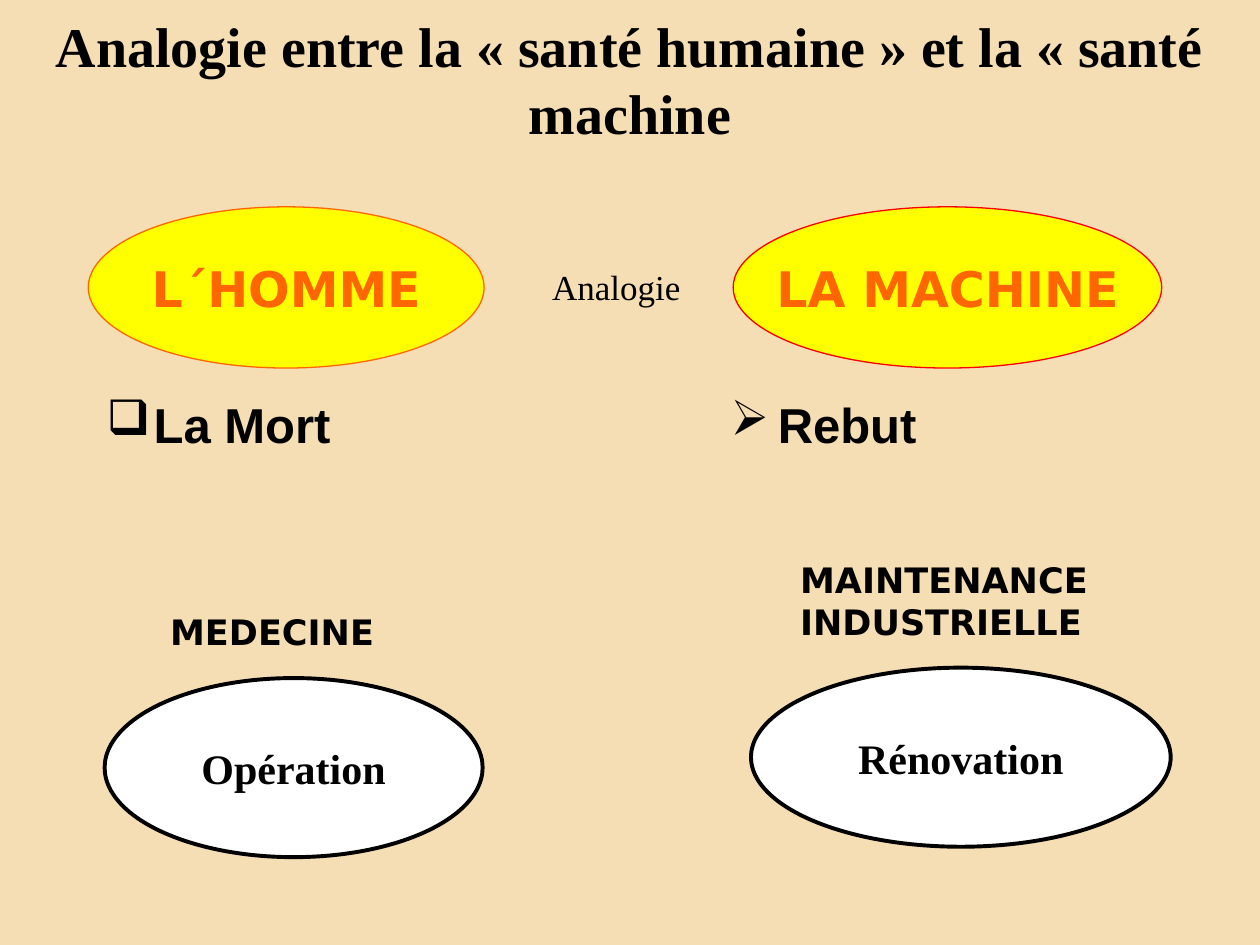
from dataclasses import dataclass

from lxml.etree import SubElement
from pptx import Presentation
from pptx.dml.color import RGBColor as Rgb
from pptx.enum.shapes import MSO_SHAPE as Kind
from pptx.enum.text import MSO_ANCHOR as Anchor, MSO_AUTO_SIZE as Fit, PP_ALIGN as Align
from pptx.oxml.ns import qn
from pptx.slide import Slide
from pptx.text.text import TextFrame
from pptx.util import Cm, Pt


@dataclass(frozen=True)
class Style:
    font: str
    size: int
    color: str
    bold: bool = True


@dataclass(frozen=True)
class Theme:
    back: str = "F5DEB3"
    ink: str = "000000"
    title: Style = Style("Times New Roman", 32, "000000")
    topic: Style = Style("DejaVu Sans", 28, "FF6600")
    point: Style = Style("Arial", 28, "000000")
    action: Style = Style("Times New Roman", 24, "000000")
    field: Style = Style("DejaVu Sans", 20, "000000")
    link: Style = Style("Times New Roman", 20, "000000", False)


@dataclass(frozen=True)
class Box:
    left: float
    top: float
    width: float
    height: float

    def place(self) -> tuple[Cm, Cm, Cm, Cm]:
        return Cm(self.left), Cm(self.top), Cm(self.width), Cm(self.height)


@dataclass(frozen=True)
class Oval:
    text: str
    box: Box
    style: Style
    fill: str
    edge: str
    weight: float


@dataclass(frozen=True)
class Label:
    lines: tuple[str, ...]
    box: Box
    style: Style
    align: Align = Align.LEFT
    wrap: bool = False
    grow: bool = True
    bullet: str = ""


THEME = Theme()
INDENT = Cm(0.95)

OVALS = (
    Oval("L´HOMME", Box(1.78, 4.17, 7.98, 3.25), THEME.topic, "FFFF00", "FF6600", 0.75),
    Oval("LA MACHINE", Box(14.78, 4.17, 8.64, 3.25), THEME.topic, "FFFF00", "FF0000", 0.75),
    Oval("Opération", Box(2.11, 13.67, 7.62, 3.61), THEME.action, "FFFFFF", THEME.ink, 2.25),
    Oval("Rénovation", Box(15.14, 13.46, 8.46, 3.61), THEME.action, "FFFFFF", THEME.ink, 2.25),
)

LABELS = (
    Label(("La Mort",), Box(1.9, 7.82, 10.6, 2.97), THEME.point,
          wrap=True, grow=False, bullet="❑"),
    Label(("Rebut",), Box(14.48, 7.82, 10.6, 2.54), THEME.point,
          wrap=True, grow=False, bullet="➢"),
    Label(("MEDECINE",), Box(3.18, 12.19, 4.98, 1.12), THEME.field),
    Label(("MAINTENANCE", "INDUSTRIELLE"), Box(15.88, 11.13, 6.73, 1.96), THEME.field),
    Label(("Analogie",), Box(10.57, 5.23, 3.71, 1.12), THEME.link, Align.CENTER, wrap=True),
)


def write(frame: TextFrame, lines: tuple[str, ...], style: Style,
          align: Align, bullet: str = "") -> None:
    for i, line in enumerate(lines):
        para = frame.paragraphs[0] if i == 0 else frame.add_paragraph()
        para.alignment = align
        if bullet:
            props = para._p.get_or_add_pPr()
            props.set("marL", str(INDENT))
            props.set("indent", str(-INDENT))
            SubElement(props, qn("a:buChar")).set("char", bullet)
        run = para.add_run()
        run.text = line
        font = run.font
        font.name, font.size, font.bold = style.font, Pt(style.size), style.bold
        font.color.rgb = Rgb.from_string(style.color)


def add_title(slide: Slide, text: str) -> None:
    title = slide.shapes.title
    title.left, title.top, title.width, title.height = Box(0, 0, 25.4, 3.18).place()
    frame = title.text_frame
    frame.word_wrap, frame.auto_size = True, Fit.NONE
    frame.vertical_anchor = Anchor.MIDDLE
    write(frame, (text,), THEME.title, Align.CENTER)


def add_oval(slide: Slide, oval: Oval) -> None:
    shape = slide.shapes.add_shape(Kind.OVAL, *oval.box.place())
    shape.shadow.inherit = False
    shape.fill.solid()
    shape.fill.fore_color.rgb = Rgb.from_string(oval.fill)
    shape.line.color.rgb = Rgb.from_string(oval.edge)
    shape.line.width = Pt(oval.weight)
    frame = shape.text_frame
    frame.word_wrap, frame.vertical_anchor = False, Anchor.MIDDLE
    write(frame, (oval.text,), oval.style, Align.CENTER)


def add_label(slide: Slide, label: Label) -> None:
    frame = slide.shapes.add_textbox(*label.box.place()).text_frame
    frame.word_wrap = label.wrap
    frame.auto_size = Fit.SHAPE_TO_FIT_TEXT if label.grow else Fit.NONE
    write(frame, label.lines, label.style, label.align, label.bullet)


def main() -> None:
    deck = Presentation()
    deck.slide_width, deck.slide_height = Cm(25.4), Cm(19.05)
    slide = deck.slides.add_slide(deck.slide_layouts[5])

    # Background and title
    slide.background.fill.solid()
    slide.background.fill.fore_color.rgb = Rgb.from_string(THEME.back)
    add_title(slide, "Analogie entre la « santé humaine » et la « santé machine")

    # Human side and machine side
    for oval in OVALS:
        add_oval(slide, oval)
    for label in LABELS:
        add_label(slide, label)

    deck.save("out.pptx")


if __name__ == "__main__":
    main()
